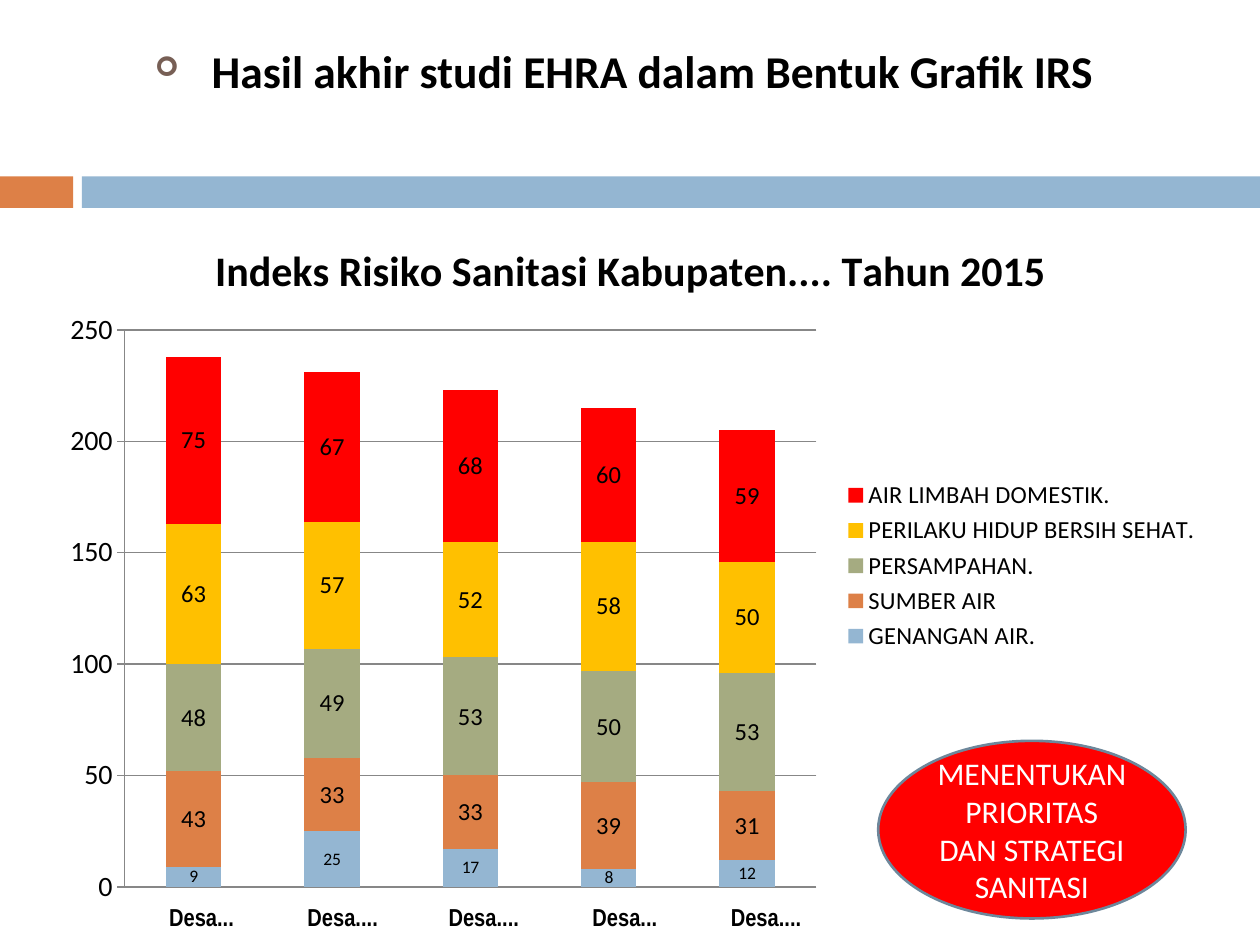
"""Build the sanitation risk index slide with its stacked column chart."""
from dataclasses import dataclass

from lxml import etree
from pptx import Presentation
from pptx.chart.data import CategoryChartData
from pptx.dml.color import RGBColor
from pptx.enum.chart import XL_CHART_TYPE, XL_LEGEND_POSITION, XL_TICK_MARK
from pptx.enum.shapes import MSO_SHAPE
from pptx.enum.text import MSO_ANCHOR, MSO_AUTO_SIZE, PP_ALIGN
from pptx.oxml import parse_xml
from pptx.oxml.ns import nsdecls, qn
from pptx.util import Inches, Pt

STACKED = XL_CHART_TYPE.COLUMN_STACKED
RIGHT = XL_LEGEND_POSITION.RIGHT
OUTSIDE = XL_TICK_MARK.OUTSIDE
RECTANGLE, OVAL = MSO_SHAPE.RECTANGLE, MSO_SHAPE.OVAL
TOP, MIDDLE = MSO_ANCHOR.TOP, MSO_ANCHOR.MIDDLE
NO_FIT, GROW = MSO_AUTO_SIZE.NONE, MSO_AUTO_SIZE.SHAPE_TO_FIT_TEXT
LEFT, CENTER = PP_ALIGN.LEFT, PP_ALIGN.CENTER


@dataclass(frozen=True)
class Theme:
    """Fonts, colours and type sizes of the slide."""
    font: str = "Calibri"
    narrow: str = "Arial Narrow"
    black: str = "000000"
    white: str = "FFFFFF"
    blue: str = "94B6D2"
    orange: str = "DD8047"
    green: str = "A5AB81"
    yellow: str = "FFC000"
    red: str = "FF0000"
    bullet: str = "775F55"
    outline: str = "6D879B"
    grid: str = "878787"
    heading: int = 26
    chart_title: int = 24
    callout: int = 18
    axis: int = 16
    label: int = 14
    small: int = 10


@dataclass(frozen=True)
class Area:
    """A rectangle in inches."""
    left: float
    top: float
    width: float
    height: float

    def lengths(self):
        """Return the four values as lengths."""
        return tuple(map(Inches, (self.left, self.top, self.width, self.height)))


@dataclass(frozen=True)
class Risk:
    """One chart series."""
    name: str
    values: tuple
    color: str
    label_size: int


THEME = Theme()
CHART_AREA = Area(0.38, 1.7, 9.25, 5.58)
PLOT_AREA = Area(0.99, 2.62, 5.49, 4.42)
BANDS = (
    (Area(0, 1.4, 0.58, 0.25), THEME.orange),
    (Area(0.65, 1.4, 9.35, 0.25), THEME.blue),
)
RISKS = (
    Risk("GENANGAN AIR.", (9, 25, 17, 8, 12), THEME.blue, THEME.small),
    Risk("SUMBER AIR", (43, 33, 33, 39, 31), THEME.orange, THEME.label),
    Risk("PERSAMPAHAN.", (48, 49, 53, 50, 53), THEME.green, THEME.label),
    Risk("PERILAKU HIDUP BERSIH SEHAT.", (63, 57, 52, 58, 50), THEME.yellow, THEME.label),
    Risk("AIR LIMBAH DOMESTIK.", (75, 67, 68, 60, 59), THEME.red, THEME.label),
)
VILLAGES = ("Desa...", "Desa....", "Desa....", "Desa...", "Desa....")
VILLAGE_LEFT, VILLAGE_STEP = 1.1, 1.12


def style_font(font, size: int, color: str = THEME.black, bold: bool = False,
               name: str = THEME.font) -> None:
    """Apply face, size, colour and weight to a font."""
    font.name, font.size, font.bold = name, Pt(size), bold
    font.color.rgb = RGBColor.from_string(color)


def write_text(frame, text: str, *, size: int, color: str = THEME.black, bold: bool = False,
               name: str = THEME.font, align=CENTER, anchor=TOP, fit=NO_FIT):
    """Fill a text frame with one formatted paragraph and return it."""
    frame.word_wrap, frame.auto_size, frame.vertical_anchor = True, fit, anchor
    para = frame.paragraphs[0]
    para.alignment = align
    span = para.add_run()
    span.text = text
    style_font(span.font, size, color, bold, name)
    return para


def add_filled(slide, kind, area: Area, color: str):
    """Add a flat shape without outline."""
    shape = slide.shapes.add_shape(kind, *area.lengths())
    shape.shadow.inherit = False
    shape.fill.solid()
    shape.fill.fore_color.rgb = RGBColor.from_string(color)
    shape.line.fill.background()
    return shape


def add_heading(slide, text: str, area: Area) -> None:
    """Write the bulleted heading in the body placeholder."""
    box = slide.placeholders[1]
    box.left, box.top, box.width, box.height = area.lengths()
    para = write_text(box.text_frame, text, size=THEME.heading, bold=True, align=LEFT)
    para.space_before = Pt(7)
    props = para._p.get_or_add_pPr()
    props.set("marL", str(Inches(0.63)))
    props.set("indent", str(Inches(-0.45)))
    color = etree.SubElement(props, qn("a:buClr"))
    etree.SubElement(color, qn("a:srgbClr"), val=THEME.bullet)
    etree.SubElement(props, qn("a:buSzPct"), val="60000")
    etree.SubElement(props, qn("a:buFont"), typeface="Wingdings")
    etree.SubElement(props, qn("a:buChar"), char="➢")


def place_plot(chart) -> None:
    """Fix the inner plot area inside the chart."""
    fractions = {
        "x": (PLOT_AREA.left - CHART_AREA.left) / CHART_AREA.width,
        "y": (PLOT_AREA.top - CHART_AREA.top) / CHART_AREA.height,
        "w": PLOT_AREA.width / CHART_AREA.width,
        "h": PLOT_AREA.height / CHART_AREA.height,
    }
    modes = '<c:layoutTarget val="inner"/><c:xMode val="edge"/><c:yMode val="edge"/>'
    sizes = "".join(f'<c:{key} val="{value:.4f}"/>' for key, value in fractions.items())
    layout = parse_xml(f'<c:layout {nsdecls("c")}><c:manualLayout>{modes}{sizes}'
                       '</c:manualLayout></c:layout>')
    plot_area = chart._chartSpace.chart.plotArea
    for old in plot_area.findall(qn("c:layout")):
        plot_area.remove(old)
    plot_area.insert(0, layout)


def add_risk_chart(slide, title: str) -> None:
    """Add the stacked column chart of all risks."""
    data = CategoryChartData(number_format="0")
    data.categories = [str(number + 1) for number in range(len(VILLAGES))]
    for risk in RISKS:
        data.add_series(risk.name, risk.values)
    chart = slide.shapes.add_chart(STACKED, *CHART_AREA.lengths(), data).chart
    style_font(chart.font, THEME.small)
    chart.has_title = True
    write_text(chart.chart_title.text_frame, title, size=THEME.chart_title, bold=True)
    chart.chart_title.include_in_layout = False
    chart.has_legend = True
    chart.legend.position = RIGHT
    chart.legend.include_in_layout = False
    style_font(chart.legend.font, THEME.label)
    chart.category_axis.visible = False
    axis = chart.value_axis
    axis.minimum_scale, axis.maximum_scale, axis.major_unit = 0, 250, 50
    axis.major_tick_mark = OUTSIDE
    style_font(axis.tick_labels.font, THEME.axis)
    axis.tick_labels.number_format = "0"
    axis.tick_labels.number_format_is_linked = False
    for line in (axis.format.line, axis.major_gridlines.format.line):
        line.color.rgb = RGBColor.from_string(THEME.grid)
        line.width = Pt(0.75)
    plot = chart.plots[0]
    plot.gap_width, plot.overlap, plot.vary_by_categories = 150, 100, False
    for series, risk in zip(plot.series, RISKS):
        series.format.fill.solid()
        series.format.fill.fore_color.rgb = RGBColor.from_string(risk.color)
        labels = series.data_labels
        labels.show_value = True
        labels.number_format, labels.number_format_is_linked = "0", False
        style_font(labels.font, risk.label_size)
    place_plot(chart)


def main() -> None:
    """Build and save the deck."""
    deck = Presentation()
    deck.slide_width, deck.slide_height = Inches(10), Inches(7.5)
    slide = deck.slides.add_slide(deck.slide_layouts[1])
    title = slide.shapes.title.element
    title.getparent().remove(title)
    for area, color in BANDS:
        add_filled(slide, RECTANGLE, area, color)
    add_heading(slide, "Hasil akhir studi EHRA dalam Bentuk Grafik IRS",
                Area(0.95, 0.29, 9.8, 0.72))
    add_risk_chart(slide, "Indeks Risiko Sanitasi Kabupaten.... Tahun 2015")
    for index, village in enumerate(VILLAGES):
        area = Area(VILLAGE_LEFT + index * VILLAGE_STEP, 7.11, 1, 0.34)
        box = slide.shapes.add_textbox(*area.lengths())
        write_text(box.text_frame, village, size=THEME.label, bold=True,
                   name=THEME.narrow, fit=GROW)
    callout = add_filled(slide, OVAL, Area(6.97, 5.88, 2.44, 1.41), THEME.red)
    callout.line.color.rgb = RGBColor.from_string(THEME.outline)
    callout.line.width = Pt(1.5)
    write_text(callout.text_frame, "MENENTUKAN PRIORITAS DAN STRATEGI SANITASI",
               size=THEME.callout, color=THEME.white, anchor=MIDDLE)
    deck.save("out.pptx")


if __name__ == "__main__":
    main()
